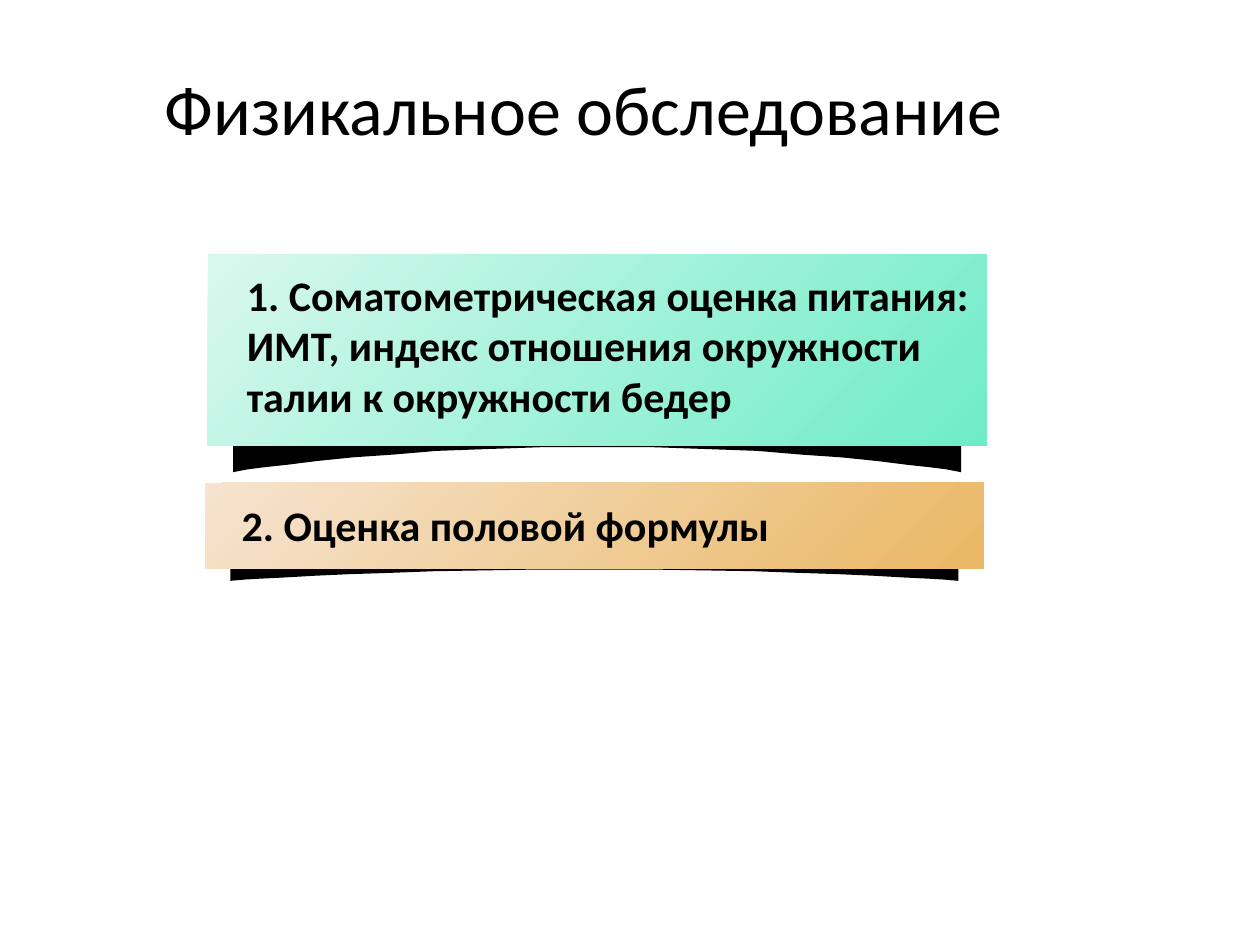
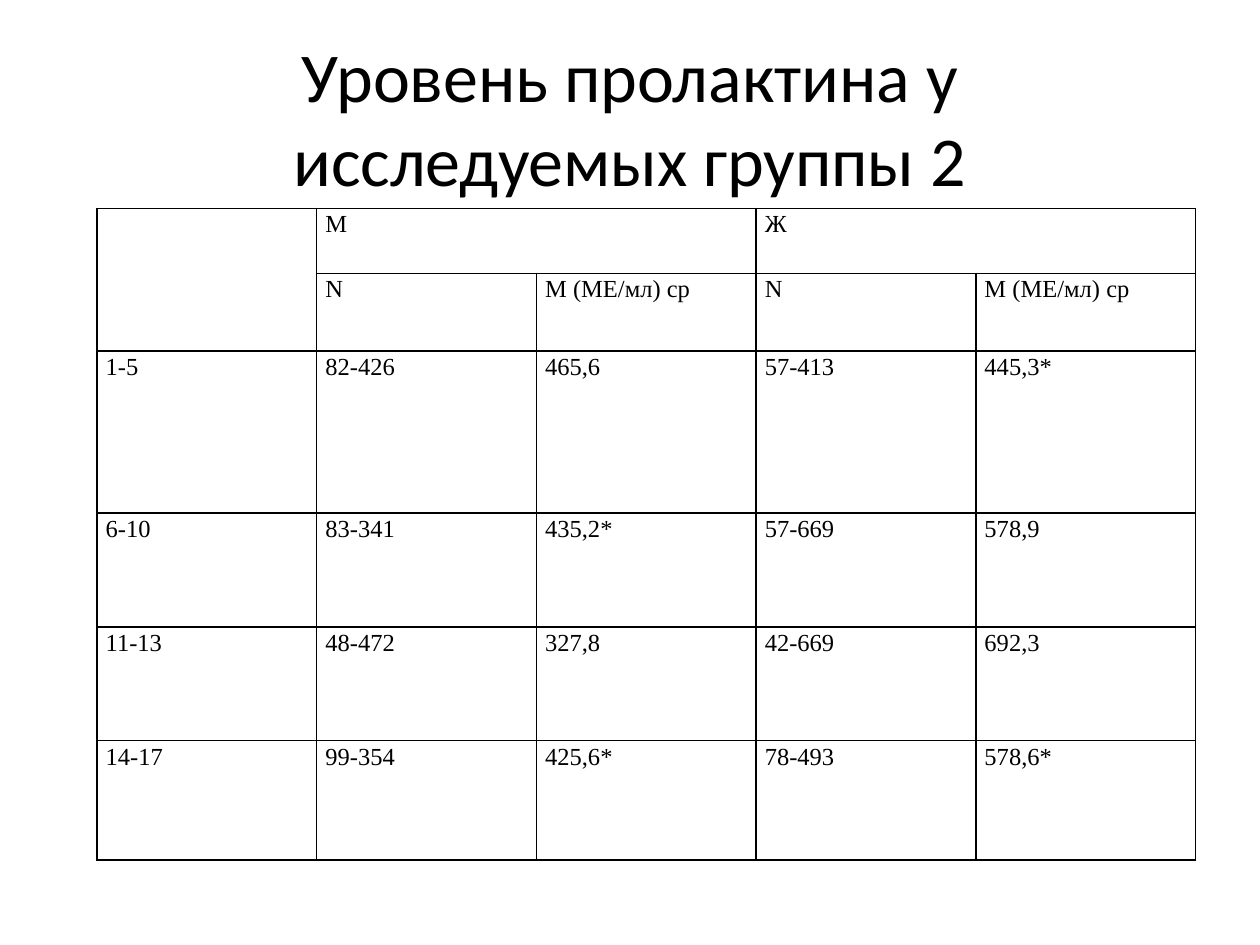
from lxml import etree
from pptx import Presentation
from pptx.dml.color import RGBColor
from pptx.enum.shapes import MSO_SHAPE
from pptx.enum.text import PP_ALIGN
from pptx.oxml.ns import qn
from pptx.util import Pt

BLACK = "000000"
MINT = ("D9F8ED", "6EECC8")
SAND = ("F6E4D0", "EAB764")

# Right half of the curved lower edge of a shadow, from the corner to the middle:
# distance from the middle as a share of half the width, depth as a share of the height
CURVE = [(1, 1), (0.96, 0.97), (0.92, 0.95), (0.85, 0.92), (0.77, 0.88), (0.67, 0.84),
         (0.56, 0.81), (0.44, 0.77), (0.3, 0.75), (0.15, 0.73), (0, 0.73)]
SHOULDER = 0.25


def color(value):
    return RGBColor.from_string(value)


def write(frame, text, size=24, font="Calibri", bold=False, align=PP_ALIGN.LEFT,
          line_spacing=None, space_after=None):
    frame.word_wrap = True
    paragraph = frame.paragraphs[0]
    paragraph.alignment = align
    paragraph.line_spacing = line_spacing
    if space_after is not None:
        paragraph.space_after = Pt(space_after)
    run = paragraph.add_run()
    run.text = text
    run.font.name = font
    run.font.size = Pt(size)
    run.font.bold = bold
    run.font.color.rgb = color(BLACK)


class Deck:
    title_size = 40
    table_font = "Times New Roman"
    table_size = 14
    cell_inset = 5
    border_width = 1

    def __init__(self):
        self.prs = Presentation()
        self.prs.slide_width, self.prs.slide_height = Pt(720), Pt(540)
        self.slide = None

    def new_slide(self):
        self.slide = self.prs.slides.add_slide(self.prs.slide_layouts[6])

    def text(self, text, left, top, width, height, **style):
        box = self.slide.shapes.add_textbox(Pt(left), Pt(top), Pt(width), Pt(height))
        write(box.text_frame, text, **style)

    def title(self, text, left, top, width, height):
        self.text(text, left, top, width, height, size=self.title_size, align=PP_ALIGN.CENTER)

    def shadow(self, left, top, width, height):
        half = width / 2
        middle = left + half
        right_edge = [(middle + x * half, top + y * height) for x, y in CURVE]
        left_edge = [(middle - x * half, top + y * height) for x, y in reversed(CURVE[:-1])]
        shoulder = top + SHOULDER * height
        roof = [(left, shoulder), (middle, top), (left + width, shoulder)]
        start, *rest = [(Pt(x), Pt(y)) for x, y in right_edge + left_edge + roof]
        builder = self.slide.shapes.build_freeform(*start)
        builder.add_line_segments(rest, close=True)
        shape = builder.convert_to_shape()
        shape.shadow.inherit = False
        shape.fill.solid()
        shape.fill.fore_color.rgb = color(BLACK)
        shape.line.fill.background()

    def bar(self, left, top, width, height, shades):
        shape = self.slide.shapes.add_shape(
            MSO_SHAPE.RECTANGLE, Pt(left), Pt(top), Pt(width), Pt(height))
        shape.shadow.inherit = False
        shape.fill.gradient()
        shape.fill.gradient_angle = 315
        for stop, shade, position in zip(shape.fill.gradient_stops, shades, (0, 1)):
            stop.color.rgb = color(shade)
            stop.position = position
        shape.line.fill.background()

    def borders(self, cell):
        properties = cell._tc.get_or_add_tcPr()
        for index, side in enumerate(("lnL", "lnR", "lnT", "lnB")):
            line = etree.Element(qn(f"a:{side}"), w=str(Pt(self.border_width)))
            fill = etree.SubElement(line, qn("a:solidFill"))
            etree.SubElement(fill, qn("a:srgbClr"), val=BLACK)
            properties.insert(index, line)

    def table(self, rows, left, top, width, heights, merges):
        columns = len(rows[0])
        table = self.slide.shapes.add_table(
            len(rows), columns, Pt(left), Pt(top), Pt(width), Pt(sum(heights))).table
        table.first_row = table.horz_banding = False
        for column in table.columns:
            column.width = Pt(width / columns)
        for row, height in zip(table.rows, heights):
            row.height = Pt(height)
        for first, last in merges:
            table.cell(*first).merge(table.cell(*last))
        for r, row in enumerate(rows):
            for c, value in enumerate(row):
                cell = table.cell(r, c)
                cell.fill.background()
                cell.margin_left = cell.margin_right = Pt(self.cell_inset)
                cell.margin_top = cell.margin_bottom = 0
                self.borders(cell)
                if value:
                    write(cell.text_frame, value, size=self.table_size,
                          font=self.table_font, line_spacing=1.1, space_after=8)


def examination_slide(deck):
    deck.new_slide()
    # Nutrition assessment
    deck.shadow(133.2, 217, 416, 52.8)
    deck.bar(118.6, 145.3, 445, 109.5, MINT)
    deck.text("1. Соматометрическая оценка питания: ИМТ, индекс отношения окружности "
              "талии к окружности бедер", 134, 150.5, 430, 94.3, bold=True)
    # Sexual development formula
    deck.shadow(131.6, 308, 416, 23.9)
    deck.bar(117.2, 275.8, 445, 49.2, SAND)
    deck.text("2. Оценка половой формулы", 131, 282.2, 404.6, 36, bold=True)
    deck.title("Физикальное обследование", 74.2, 33.8, 518.4, 55.4)


def prolactin_slide(deck):
    deck.new_slide()
    deck.title("Уровень пролактина у исследуемых группы 2", 55.4, 15.1, 609.1, 104.4)
    # Levels by age group and sex
    levels = [
        ("", "М", "", "Ж", ""),
        ("", "N", "M (МЕ/мл) ср", "N", "M (МЕ/мл) ср"),
        ("1-5", "82-426", "465,6", "57-413", "445,3*"),
        ("6-10", "83-341", "435,2*", "57-669", "578,9"),
        ("11-13", "48-472", "327,8", "42-669", "692,3"),
        ("14-17", "99-354", "425,6*", "78-493", "578,6*"),
    ]
    header_merges = [((0, 0), (1, 0)), ((0, 1), (0, 2)), ((0, 3), (0, 4))]
    deck.table(levels, 55.4, 119, 627.8, [37.3, 44.2, 92.7, 65, 65, 68.2], header_merges)


def main():
    deck = Deck()
    examination_slide(deck)
    prolactin_slide(deck)
    deck.prs.save("out.pptx")


if __name__ == "__main__":
    main()
